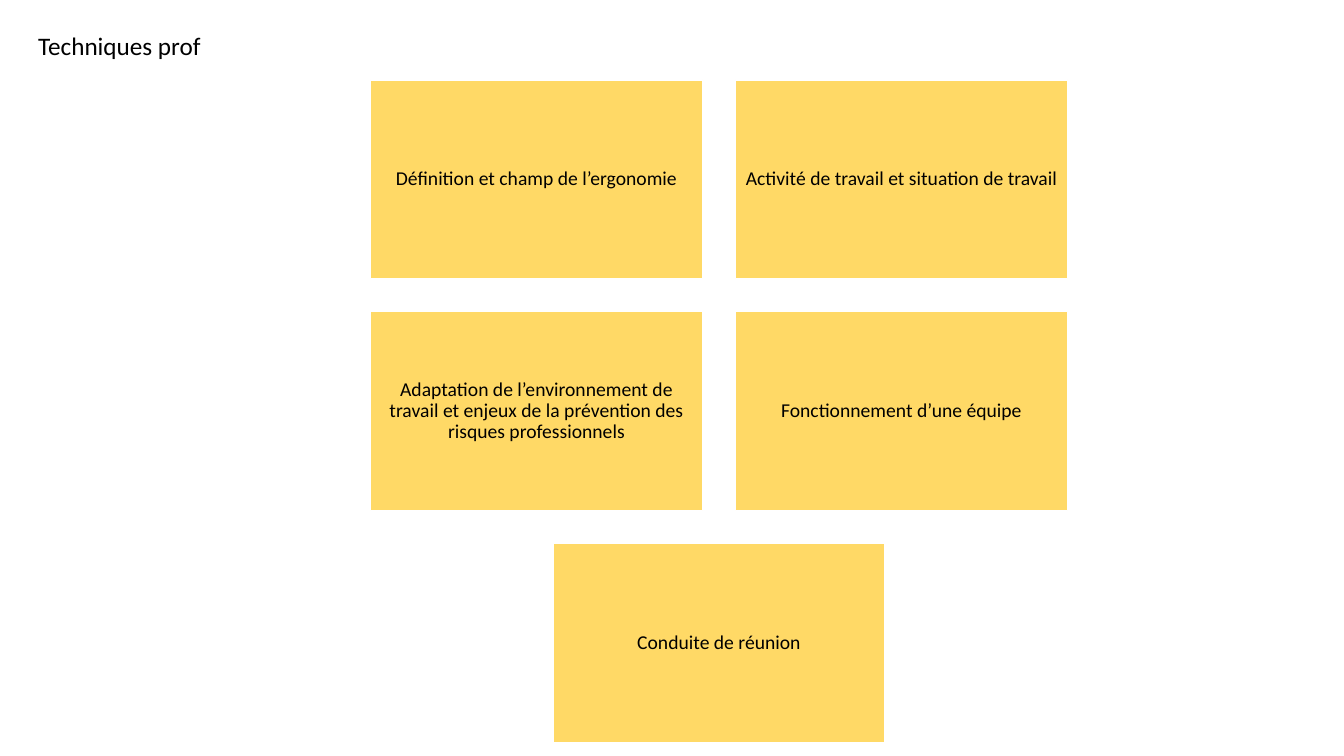
from dataclasses import dataclass

from pptx import Presentation
from pptx.dml.color import RGBColor as RGB
from pptx.enum.shapes import MSO_SHAPE as Shape
from pptx.enum.text import MSO_ANCHOR as Anchor, PP_ALIGN as Align
from pptx.util import Pt


@dataclass(frozen=True)
class Theme:
    font: str = "Calibri"
    ink: RGB = RGB(0, 0, 0)
    card: RGB = RGB(0xFF, 0xD9, 0x66)
    edge: RGB = RGB(0xFF, 0xFF, 0xFF)
    title: int = 18
    body: int = 14


THEME = Theme()
WIDE, HIGH, GAP = 237, 142, 23.7
MID, TOP = 513.6, 57
ROWS = [
    ["Définition et champ de l’ergonomie",
     "Activité de travail et situation de travail"],
    ["Adaptation de l’environnement de travail et enjeux de la prévention "
     "des risques professionnels",
     "Fonctionnement d’une équipe"],
    ["Conduite de réunion"],
]


def style(para, size, align):
    para.alignment = align
    para.font.name = THEME.font
    para.font.size = Pt(size)
    para.font.color.rgb = THEME.ink


def add_title(slide, text):
    title = slide.shapes.title
    title.left, title.top = Pt(20), Pt(18)
    title.width, title.height = Pt(232.5), Pt(29)
    frame = title.text_frame
    frame.text = text
    frame.vertical_anchor = Anchor.TOP
    style(frame.paragraphs[0], THEME.title, Align.LEFT)


def add_card(slide, text, left, top):
    card = slide.shapes.add_shape(
        Shape.RECTANGLE, Pt(left), Pt(top), Pt(WIDE), Pt(HIGH))
    card.shadow.inherit = False
    card.fill.solid()
    card.fill.fore_color.rgb = THEME.card
    card.line.color.rgb = THEME.edge
    card.line.width = Pt(1)
    frame = card.text_frame
    frame.word_wrap = True
    frame.vertical_anchor = Anchor.MIDDLE
    frame.margin_left = frame.margin_right = Pt(4.2)
    frame.margin_top = frame.margin_bottom = Pt(4.2)
    frame.text = text
    para = frame.paragraphs[0]
    para.line_spacing = 0.9
    style(para, THEME.body, Align.CENTER)


def add_grid(slide, rows):
    """Place each row of cards centred on the same axis."""
    for i, row in enumerate(rows):
        span = len(row) * (WIDE + GAP) - GAP
        for j, text in enumerate(row):
            left = MID - span / 2 + j * (WIDE + GAP)
            add_card(slide, text, left, TOP + i * (HIGH + GAP))


def main():
    deck = Presentation()
    deck.slide_width, deck.slide_height = Pt(960), Pt(540)
    slide = deck.slides.add_slide(deck.slide_layouts.get_by_name("Title Only"))
    add_title(slide, "Techniques prof")
    add_grid(slide, ROWS)
    deck.save("out.pptx")


if __name__ == "__main__":
    main()
